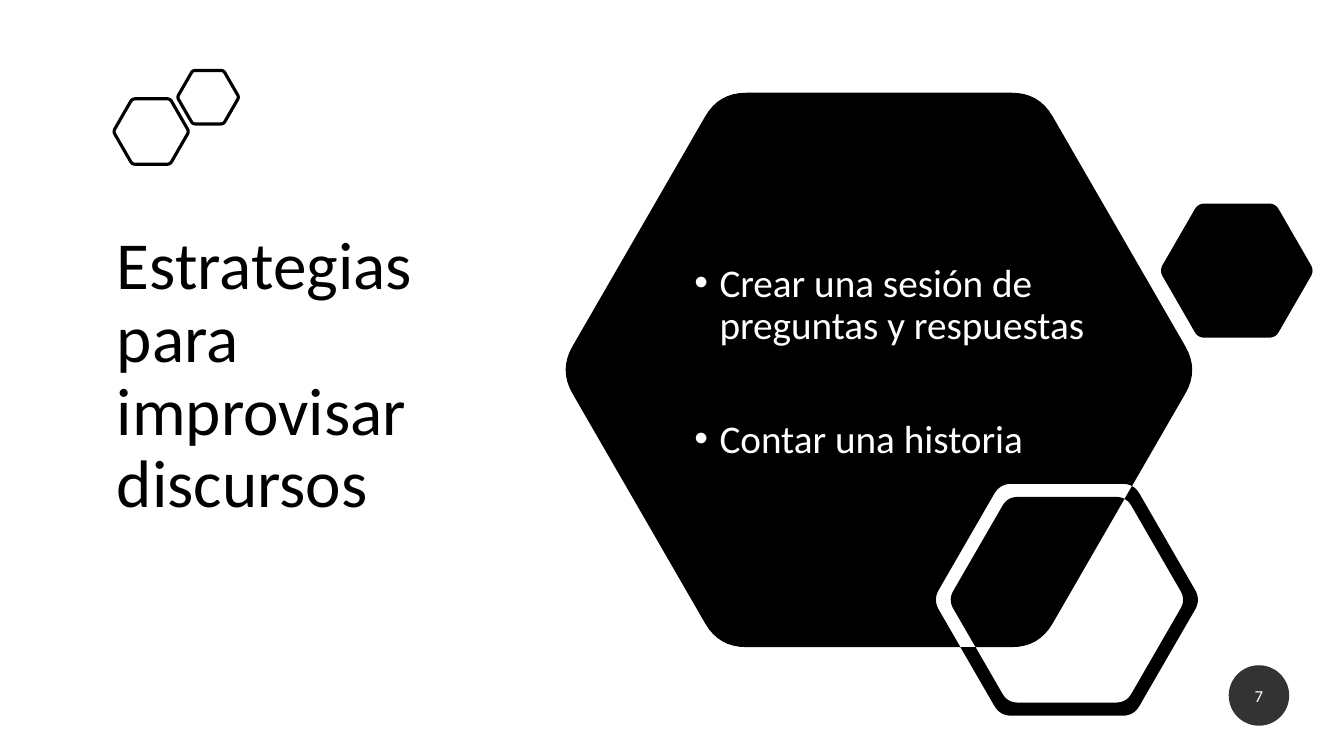
import math

import lxml.etree
import pptx
import pptx.dml.color
import pptx.enum.shapes
import pptx.enum.text
import pptx.oxml
import pptx.oxml.ns
import pptx.util

COLORS = {"ink": "000000", "paper": "FFFFFF"}
FONT = "Calibri"
COLUMNS, ROWS = 80, 45
CORNER_CUT = 0.085
CURVE_STEPS = 8


def color(name):
    return pptx.dml.color.RGBColor.from_string(COLORS[name])


def add_xml(parent, tag, **attributes):
    return lxml.etree.SubElement(parent, pptx.oxml.ns.qn(tag), attributes)


class Page:
    def __init__(self, deck):
        self.column = deck.slide_width / COLUMNS
        self.row = deck.slide_height / ROWS
        self.slide = deck.slides.add_slide(deck.slide_layouts[5])

    def frame(self, left, top, width, height):
        units = (self.column, self.row, self.column, self.row)
        return [round(size * unit) for size, unit in zip((left, top, width, height), units)]

    def style(self, para, size, ink):
        for span in para.runs:
            span.font.name = FONT
            span.font.size = pptx.util.Pt(size)
            span.font.color.rgb = color(ink)

    def title(self, words, *area):
        box = self.slide.shapes.title
        box.left, box.top, box.width, box.height = self.frame(*area)
        box.text_frame.text = words
        box.text_frame.word_wrap = True
        box.text_frame.auto_size = pptx.enum.text.MSO_AUTO_SIZE.NONE
        box.text_frame.vertical_anchor = pptx.enum.text.MSO_ANCHOR.MIDDLE
        para = box.text_frame.paragraphs[0]
        para.alignment = pptx.enum.text.PP_ALIGN.LEFT
        para.line_spacing = 0.9
        self.style(para, 48, "ink")

    def bullets(self, items, *area):
        box = self.slide.shapes.add_textbox(*self.frame(*area))
        text = box.text_frame
        text.text = "\n".join(items)
        text.word_wrap = True
        text.vertical_anchor = pptx.enum.text.MSO_ANCHOR.MIDDLE
        text.margin_top = pptx.util.Inches(0.19)
        text.margin_bottom = pptx.util.Inches(0.49)
        indent = pptx.util.Inches(0.25)
        for number, para in enumerate(text.paragraphs):
            properties = para._p.get_or_add_pPr()
            properties.set("marL", str(indent))
            properties.set("indent", str(-indent))
            add_xml(properties, "a:buFont", typeface="Arial")
            add_xml(properties, "a:buChar", char="•")
            para.line_spacing = 0.9
            if number:
                para.space_before = pptx.util.Pt(51)
            self.style(para, 28, "paper")

    def hexagon_points(self, center_x, center_y, height):
        side = height / math.sqrt(3)
        corners = [
            (center_x + side * math.cos(turn * math.pi / 3),
             center_y + side * math.sin(turn * math.pi / 3))
            for turn in range(6)
        ]
        points = []
        for index, corner in enumerate(corners):
            before, after = corners[index - 1], corners[(index + 1) % 6]
            for step in range(CURVE_STEPS + 1):
                share = step / CURVE_STEPS
                back = CORNER_CUT * (1 - share) ** 2
                ahead = CORNER_CUT * share ** 2
                x, y = (c + back * (b - c) + ahead * (a - c)
                        for b, c, a in zip(before, corner, after))
                points.append((x * self.column, y * self.row))
        return points

    def hexagons(self, *outlines, filled):
        builder = None
        for outline in outlines:
            start, *others = self.hexagon_points(*outline)
            if builder is None:
                builder = self.slide.shapes.build_freeform(*start)
            else:
                builder.move_to(*start)
            builder.add_line_segments(others, close=True)
        shape = builder.convert_to_shape()
        shape.shadow.inherit = False
        if filled:
            shape.fill.solid()
            shape.fill.fore_color.rgb = color("ink")
            shape.line.fill.background()
        else:
            shape.fill.background()
            shape.line.color.rgb = color("ink")
            shape.line.width = pptx.util.Pt(2.25)

    def number_badge(self, words, *area):
        badge = self.slide.shapes.add_shape(
            pptx.enum.shapes.MSO_SHAPE.OVAL, *self.frame(*area))
        badge.shadow.inherit = False
        badge.line.fill.background()
        badge.fill.solid()
        badge.fill.fore_color.rgb = color("ink")
        tint = badge._element.spPr.find(".//" + pptx.oxml.ns.qn("a:srgbClr"))
        add_xml(tint, "a:alpha", val="80000")
        text = badge.text_frame
        text.text = words
        text.word_wrap = False
        text.vertical_anchor = pptx.enum.text.MSO_ANCHOR.MIDDLE
        para = text.paragraphs[0]
        para.alignment = pptx.enum.text.PP_ALIGN.CENTER
        para.space_after = pptx.util.Pt(6)
        self.style(para, 12, "paper")


def main():
    deck = pptx.Presentation()
    deck.slide_width = pptx.util.Emu(12192000)
    deck.slide_height = pptx.util.Inches(7.5)
    page = Page(deck)
    page.title("Estrategias para improvisar discursos", 6.36, 10.26, 24.36, 24.36)
    for outline in ((9, 7.83, 3.9), (12.39, 5.79, 3.18)):
        page.hexagons(outline, filled=False)
    page.hexagons(
        (52.32, 22.02, 33),
        (73.62, 16.11, 7.98),
        (63.51, 35.7, 13.8),
        (63.51, 35.7, 12.24),
        filled=True,
    )
    page.bullets(
        ["Crear una sesión de preguntas y respuestas", "Contar una historia"],
        40.74, 13.74, 25.56, 17.46,
    )
    page.number_badge("7", 73.14, 39.6, 3.6, 3.6)
    deck.save("out.pptx")


if __name__ == "__main__":
    main()
